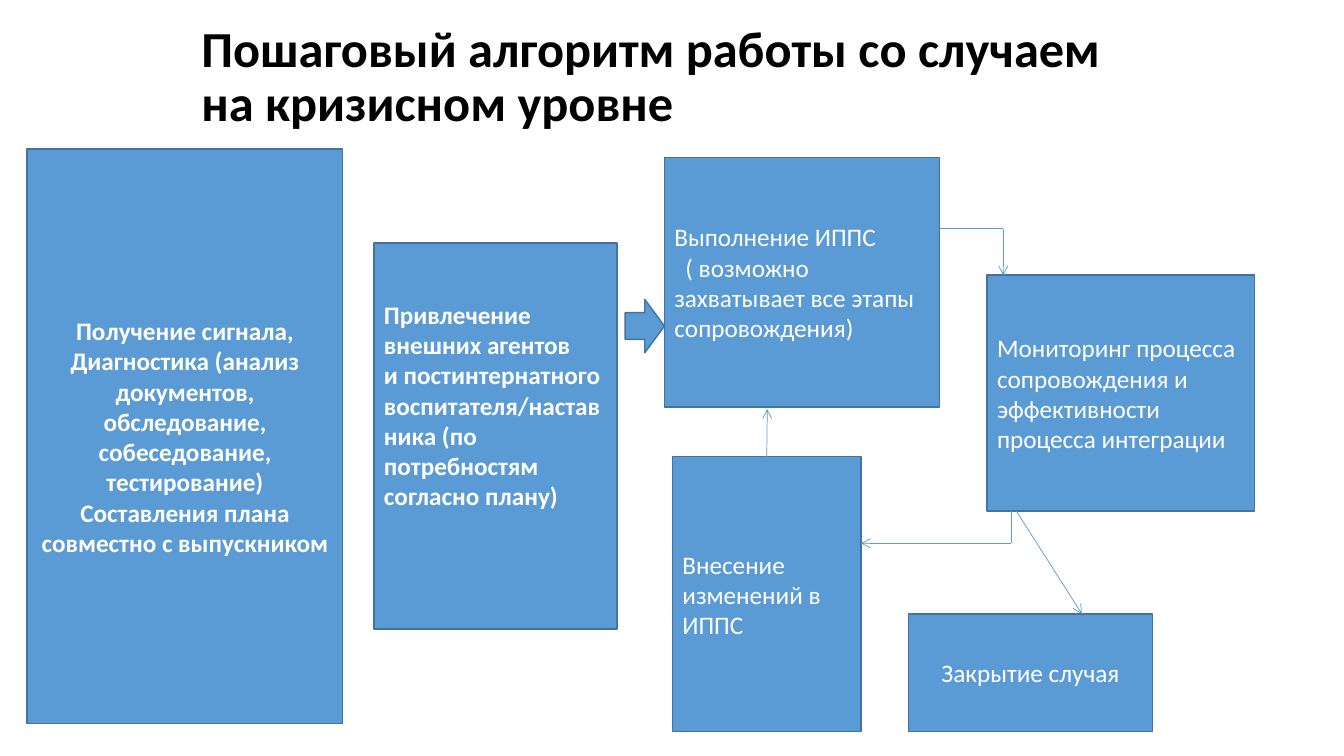
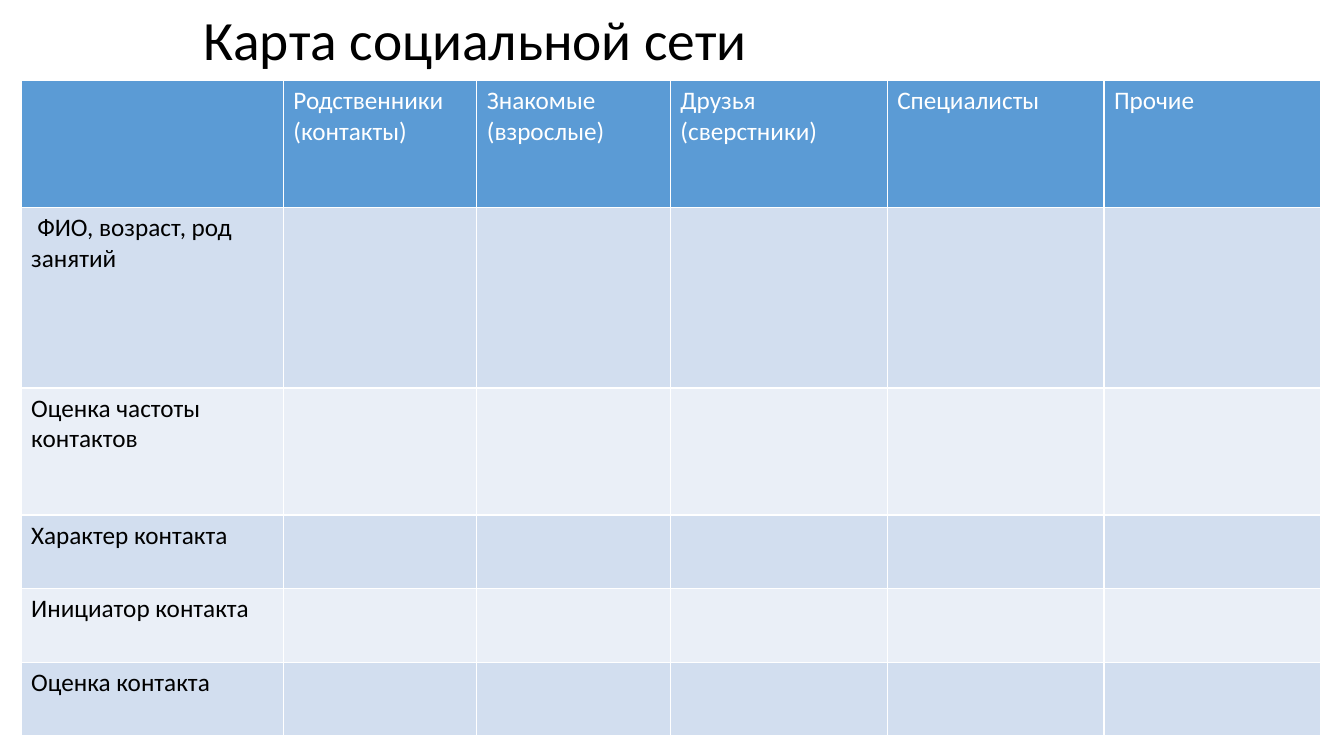
from lxml import etree
from pptx import Presentation
from pptx.dml.color import RGBColor
from pptx.enum.shapes import MSO_CONNECTOR, MSO_SHAPE
from pptx.enum.text import MSO_ANCHOR, PP_ALIGN
from pptx.oxml.ns import qn
from pptx.util import Inches, Pt

RECTANGLE = MSO_SHAPE.RECTANGLE
RIGHT_ARROW = MSO_SHAPE.RIGHT_ARROW
STRAIGHT = MSO_CONNECTOR.STRAIGHT
MIDDLE = MSO_ANCHOR.MIDDLE
LEFT, CENTER = PP_ALIGN.LEFT, PP_ALIGN.CENTER

BLUE, OUTLINE = "5B9BD5", "43739E"
BLACK, WHITE = "000000", "FFFFFF"
BANDS = ("D2DEEF", "EAEFF7")
FONT = "Calibri"
BODY_SIZE = 18
TOP = 0  # connection site


def color(hex_value):
    return RGBColor.from_string(hex_value)


class Deck:
    """Holds the shared style and the current slide."""

    def __init__(self):
        self.presentation = Presentation()
        self.presentation.slide_width = Inches(13.33)
        self.presentation.slide_height = Inches(7.5)
        self.slide = None

    def new_slide(self):
        self.slide = self.presentation.slides.add_slide(self.presentation.slide_layouts[6])

    def set_text(self, frame, lines, text_color, align=LEFT, spacing=1.0, indents=(), **font_format):
        """Fill a frame; indents gives the first-line indent of each paragraph."""
        frame.word_wrap = True
        font_values = {"name": FONT, "size": Pt(BODY_SIZE), "bold": False, **font_format}
        for index, line in enumerate(lines):
            paragraph = frame.paragraphs[0] if index == 0 else frame.add_paragraph()
            paragraph.alignment = align
            paragraph.line_spacing = spacing
            if index < len(indents):
                paragraph._p.get_or_add_pPr().set("indent", str(Inches(indents[index])))
            run = paragraph.add_run()
            run.text = line
            for name, value in font_values.items():
                setattr(run.font, name, value)
            run.font.color.rgb = color(text_color)

    def title(self, text, left, top, width, height, size, bold=False):
        box = self.slide.shapes.add_textbox(*map(Inches, (left, top, width, height)))
        box.text_frame.vertical_anchor = MIDDLE
        self.set_text(box.text_frame, [text], BLACK, spacing=0.9, size=Pt(size), bold=bold)

    def block(self, left, top, width, height, lines=(), kind=RECTANGLE, bottom=0.05, **text_format):
        shape = self.slide.shapes.add_shape(kind, *map(Inches, (left, top, width, height)))
        shape.shadow.inherit = False
        shape.fill.solid()
        shape.fill.fore_color.rgb = color(BLUE)
        shape.line.color.rgb = color(OUTLINE)
        shape.line.width = Pt(1)
        shape.text_frame.vertical_anchor = MIDDLE
        shape.text_frame.margin_bottom = Inches(bottom)
        self.set_text(shape.text_frame, lines, WHITE, **text_format)
        return shape

    def line(self, start, end, arrow=False):
        connector = self.slide.shapes.add_connector(STRAIGHT, *map(Inches, (*start, *end)))
        connector.line.color.rgb = color(BLUE)
        connector.line.width = Pt(0.5)
        if arrow:
            outline = connector.line._get_or_add_ln()
            etree.SubElement(outline, qn("a:tailEnd"), type="arrow")
        etree.SubElement(connector._element.spPr, qn("a:effectLst"))
        return connector

    def route(self, *points):
        """Draw straight segments, with an arrowhead on the last one."""
        segments = list(zip(points, points[1:]))
        for number, (start, end) in enumerate(segments, 1):
            self.line(start, end, arrow=number == len(segments))

    def table(self, left, top, widths, heights, headers, labels, label_indents):
        place = map(Inches, (left, top, sum(widths), sum(heights)))
        table = self.slide.shapes.add_table(len(heights), len(widths), *place).table
        for column, width in zip(table.columns, widths):
            column.width = Inches(width)
        for row, height in zip(table.rows, heights):
            row.height = Inches(height)
        for row_index in range(len(heights)):
            fill = BANDS[(row_index - 1) % 2] if row_index else BLUE
            for column_index in range(len(widths)):
                cell = table.cell(row_index, column_index)
                cell.fill.solid()
                cell.fill.fore_color.rgb = color(fill)
        for column_index, header in enumerate(headers, 1):
            self.set_text(table.cell(0, column_index).text_frame, [header], WHITE)
        for row_index, label in enumerate(labels, 1):
            indent = label_indents.get(label, 0)
            self.set_text(table.cell(row_index, 0).text_frame, [label], BLACK, indents=[indent])


def crisis_algorithm(deck):
    deck.new_slide()
    deck.title("Пошаговый алгоритм работы со случаем на кризисном уровне",
               1.9, 0, 9.53, 1.55, size=36, bold=True)

    # Steps
    deck.block(0.27, 1.48, 3.13, 5.7, [
        "Получение сигнала,",
        "Диагностика (анализ документов, обследование, собеседование, тестирование)",
        "Составления плана совместно с выпускником",
    ], align=CENTER, bold=True)
    deck.block(3.71, 2.41, 2.41, 3.83, [
        "Привлечение внешних агентов",
        "и постинтернатного воспитателя/наставника (по потребностям согласно плану)",
    ], bottom=0.66, bold=True)
    deck.block(6.59, 1.56, 2.73, 2.48, [
        "Выполнение ИППС",
        "( возможно захватывает все этапы сопровождения)",
    ], indents=(0, 0.11))
    changes = deck.block(6.67, 4.53, 1.87, 2.73, ["Внесение изменений в ИППС"])
    deck.block(9.79, 2.73, 2.65, 2.34,
               ["Мониторинг процесса сопровождения и эффективности процесса интеграции"])
    deck.block(9.01, 6.09, 2.42, 1.17, ["Закрытие случая"], align=CENTER)

    # Arrows between the steps
    deck.route((9.32, 2.27), (9.95, 2.27), (9.95, 2.73))
    deck.route((10.03, 5.07), (10.03, 5.39), (8.54, 5.39))
    deck.route((10.08, 5.07), (10.73, 6.09))
    deck.block(6.2, 2.97, 0.39, 0.53, kind=RIGHT_ARROW)
    deck.line((7.61, 4.53), (7.61, 4.06), arrow=True).begin_connect(changes, TOP)


def social_network_map(deck):
    deck.new_slide()
    deck.title("Карта социальной сети", 1.92, 0.17, 9.5, 0.5, size=39.6)
    first_label = "ФИО, возраст, род занятий"
    deck.table(
        0.21, 0.8,
        widths=[2.6] + [1.92] * 2 + [2.15] * 3,
        heights=[1.26, 1.79, 1.26] + [0.73] * 3,
        headers=["Родственники (контакты)", "Знакомые (взрослые)", "Друзья (сверстники)",
                 "Специалисты", "Прочие"],
        labels=[first_label, "Оценка частоты контактов", "Характер контакта",
                "Инициатор контакта", "Оценка контакта"],
        label_indents={first_label: 0.06},
    )


def main():
    deck = Deck()
    crisis_algorithm(deck)
    social_network_map(deck)
    deck.presentation.save("out.pptx")


if __name__ == "__main__":
    main()
